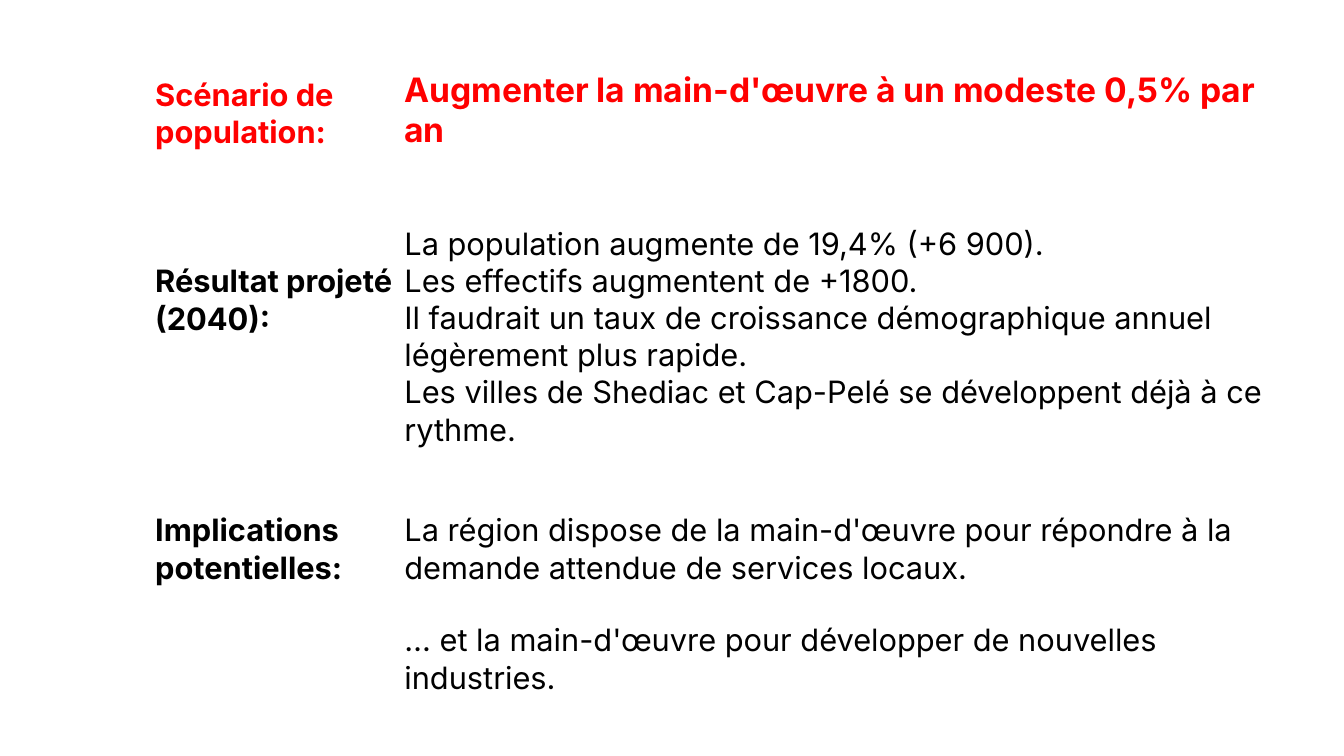
from dataclasses import dataclass

from lxml.etree import SubElement
from pptx import Presentation
from pptx.dml.color import RGBColor
from pptx.enum.text import MSO_ANCHOR
from pptx.oxml.ns import qn
from pptx.table import _Cell
from pptx.util import Pt

RED = RGBColor(0xFF, 0x00, 0x00)
BLACK = RGBColor(0x00, 0x00, 0x00)
WHITE = RGBColor(0xFF, 0xFF, 0xFF)
FONT_NAME = "Inter"
TABLE_LEFT, TABLE_TOP = 110.16, 25.92
COLUMN_WIDTHS = (178, 639)
MARGINS = {
    "margin_left": Pt(0.72),
    "margin_right": Pt(0.72),
    "margin_top": Pt(0.72),
    "margin_bottom": Pt(0),
}


@dataclass(frozen=True)
class CellText:
    lines: tuple[str, ...] = ()
    size: float = 22
    bold: bool = False
    color: RGBColor = BLACK
    anchor: MSO_ANCHOR = MSO_ANCHOR.BOTTOM


@dataclass(frozen=True)
class ScenarioRow:
    height: float
    label: CellText = CellText()
    detail: CellText = CellText()


ROWS = (
    ScenarioRow(
        82,
        CellText(("Scénario de population:",), bold=True, color=RED),
        CellText(("Augmenter la main-d'œuvre à un modeste 0,5% par an",), 24, True, RED),
    ),
    ScenarioRow(
        212.5,
        CellText(("Résultat projeté (2040):",), bold=True, anchor=MSO_ANCHOR.MIDDLE),
        CellText((
            "La population augmente de 19,4% (+6 900).",
            "Les effectifs augmentent de +1800.",
            "Il faudrait un taux de croissance démographique annuel légèrement plus rapide.",
            "Les villes de Shediac et Cap-Pelé se développent déjà à ce rythme.",
        )),
    ),
    ScenarioRow(
        98.6,
        CellText(("Implications potentielles:",), bold=True),
        CellText((
            "La région dispose de la main-d'œuvre pour répondre à la demande attendue "
            "de services locaux.",
        )),
    ),
    ScenarioRow(
        78.5,
        detail=CellText(("… et la main-d'œuvre pour développer de nouvelles industries.",)),
    ),
    ScenarioRow(89.3),
)


def set_attributes(target: object, values: dict[str, object]) -> None:
    """Set every named attribute on the target."""
    for name, value in values.items():
        setattr(target, name, value)


def add_borders(cell: _Cell, color: RGBColor, width: float) -> None:
    """Draw the same solid line on all four sides of a cell."""
    properties = cell._tc.get_or_add_tcPr()
    for side in ("lnL", "lnR", "lnT", "lnB"):
        line = SubElement(properties, qn(f"a:{side}"), w=str(Pt(width)))
        fill = SubElement(line, qn("a:solidFill"))
        SubElement(fill, qn("a:srgbClr"), val=str(color))


def fill_cell(cell: _Cell, content: CellText) -> None:
    """Format a table cell and write its paragraphs."""
    set_attributes(cell, {**MARGINS, "vertical_anchor": content.anchor})
    add_borders(cell, WHITE, 1)
    cell.fill.background()
    cell.text = "\n".join(content.lines)
    for paragraph in cell.text_frame.paragraphs:
        for run in paragraph.runs:
            set_attributes(run.font, {
                "name": FONT_NAME,
                "size": Pt(content.size),
                "bold": content.bold,
            })
            run.font.color.rgb = content.color


def main() -> None:
    """Build the population scenario slide."""
    presentation = Presentation()
    set_attributes(presentation, {"slide_width": Pt(960), "slide_height": Pt(540)})
    slide = presentation.slides.add_slide(presentation.slide_layouts[6])
    table = slide.shapes.add_table(
        len(ROWS), len(COLUMN_WIDTHS), Pt(TABLE_LEFT), Pt(TABLE_TOP),
        Pt(sum(COLUMN_WIDTHS)), Pt(sum(row.height for row in ROWS)),
    ).table
    set_attributes(table, {"first_row": False, "horz_banding": False})
    for column, width in zip(table.columns, COLUMN_WIDTHS):
        column.width = Pt(width)
    for table_row, row in zip(table.rows, ROWS):
        table_row.height = Pt(row.height)
        for cell, content in zip(table_row.cells, (row.label, row.detail)):
            fill_cell(cell, content)
    presentation.save("out.pptx")


if __name__ == "__main__":
    main()
